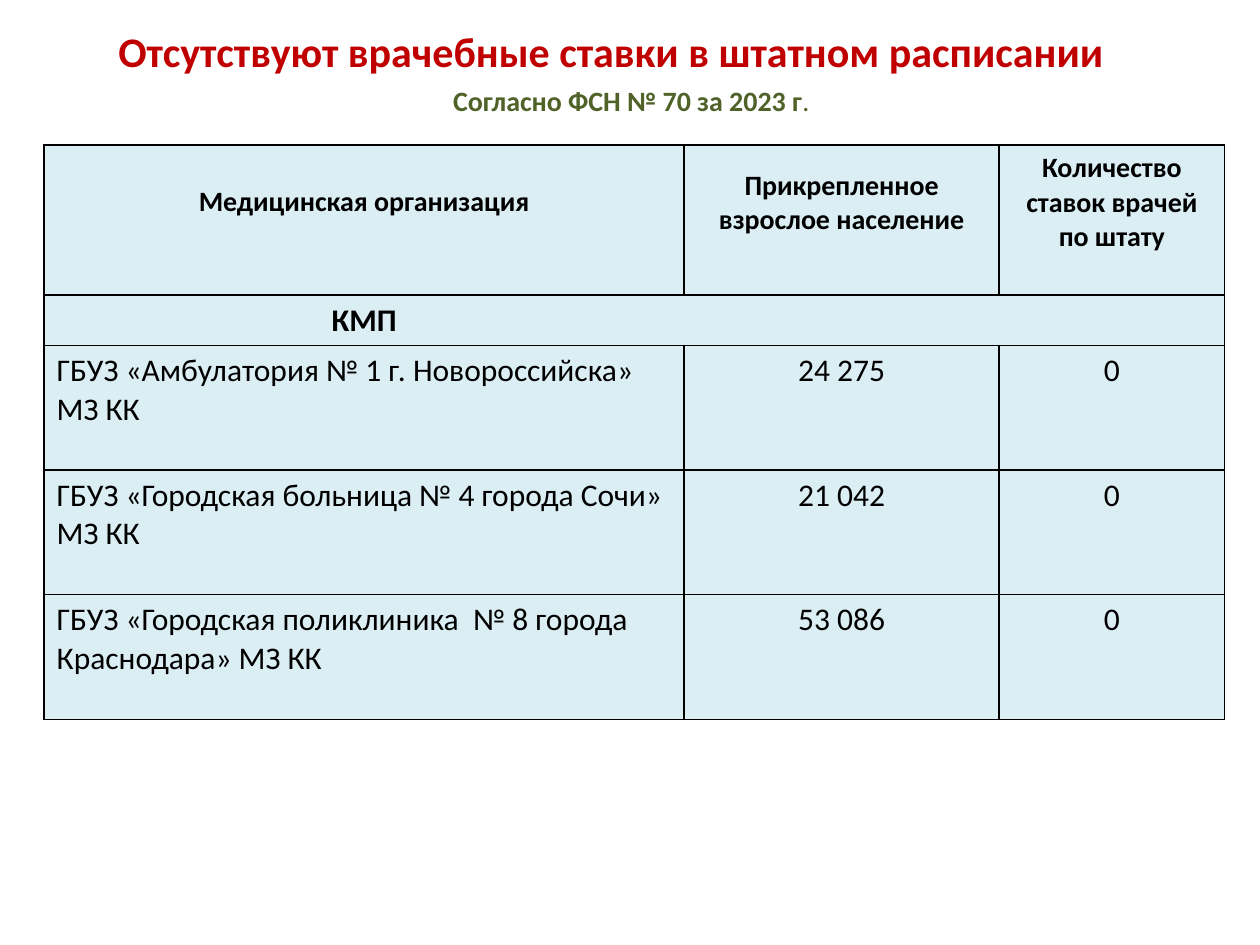
from lxml.etree import SubElement
from pptx import Presentation
from pptx.dml.color import RGBColor
from pptx.enum.text import MSO_ANCHOR, PP_ALIGN
from pptx.oxml.ns import qn
from pptx.util import Inches, Pt

RED = RGBColor(0xC0, 0x00, 0x00)
GREEN = RGBColor(0x4F, 0x62, 0x28)
BLACK = RGBColor(0x00, 0x00, 0x00)
PALE_BLUE = RGBColor(0xDB, 0xEE, 0xF4)

COL_WIDTHS = [5.08, 2.5, 1.79]
ROW_HEIGHTS = [1.19, 0.4, 0.99, 0.99, 0.99]
HEADERS = [
    ("Медицинская организация", MSO_ANCHOR.TOP, 0.32, 0.05),
    ("Прикрепленное взрослое население", MSO_ANCHOR.MIDDLE, 0.05, 0.32),
    ("Количество ставок врачей по штату", MSO_ANCHOR.MIDDLE, 0.05, 0.33),
]
SECTION = "КМП"
CLINICS = [
    ("ГБУЗ «Амбулатория № 1 г. Новороссийска» МЗ КК", "24 275", "0"),
    ("ГБУЗ «Городская больница № 4 города Сочи» МЗ КК", "21 042", "0"),
    ("ГБУЗ «Городская поликлиника  № 8 города Краснодара» МЗ КК", "53 086", "0"),
]


def add_run(p, text, size, color, bold):
    """Append one formatted run to a paragraph."""
    r = p.add_run()
    r.text = text
    r.font.name = "Calibri"
    r.font.size = Pt(size)
    r.font.bold = bold
    r.font.color.rgb = color


def add_heading(s, box, size, color, runs):
    """Place a centred line of (text, bold) runs in the box."""
    tf = s.shapes.add_textbox(*map(Inches, box)).text_frame
    tf.word_wrap = True
    tf.vertical_anchor = MSO_ANCHOR.MIDDLE
    p = tf.paragraphs[0]
    p.alignment = PP_ALIGN.CENTER
    for text, bold in runs:
        add_run(p, text, size, color, bold)


def style_cell(cell, sides):
    """Fill a cell and rule only the given sides."""
    tcPr = cell._tc.get_or_add_tcPr()
    for side in "LRTB":
        ln = SubElement(tcPr, qn(f"a:ln{side}"), w=str(Pt(0.96)))
        if side in sides:
            fill = SubElement(ln, qn("a:solidFill"))
            SubElement(fill, qn("a:srgbClr"), val=str(BLACK))
        else:
            SubElement(ln, qn("a:noFill"))
    cell.fill.solid()
    cell.fill.fore_color.rgb = PALE_BLUE


def write_cell(cell, text, size, bold, align):
    """Write one aligned paragraph in a cell."""
    p = cell.text_frame.paragraphs[0]
    p.alignment = align
    add_run(p, text, size, BLACK, bold)


def add_clinic_table(s, box):
    """Place the table of clinics without physician posts in the box."""
    frame = s.shapes.add_table(len(ROW_HEIGHTS), len(COL_WIDTHS), *map(Inches, box))
    table = frame.table
    for col, width in zip(table.columns, COL_WIDTHS):
        col.width = Inches(width)
    for row, height in zip(table.rows, ROW_HEIGHTS):
        row.height = Inches(height)
    section_sides = ["LTB", "TB", "RTB"]
    for i, row in enumerate(table.rows):
        for j, cell in enumerate(row.cells):
            style_cell(cell, section_sides[j] if i == 1 else "LRTB")
    for j, (text, anchor, top, bottom) in enumerate(HEADERS):
        cell = table.cell(0, j)
        cell.vertical_anchor = anchor
        cell.margin_top, cell.margin_bottom = Inches(top), Inches(bottom)
        write_cell(cell, text, 16, True, PP_ALIGN.CENTER)
    write_cell(table.cell(1, 0), SECTION, 18, True, PP_ALIGN.CENTER)
    for i, clinic in enumerate(CLINICS, 2):
        for j, text in enumerate(clinic):
            align = PP_ALIGN.CENTER if j else PP_ALIGN.LEFT
            write_cell(table.cell(i, j), text, 18, False, align)


def main():
    """Build and save the slide."""
    prs = Presentation()
    prs.slide_width, prs.slide_height = Inches(10), Inches(7.5)
    s = prs.slides.add_slide(prs.slide_layouts[6])
    add_heading(s, (0.35, 0.13, 9, 0.54), 24, RED,
                [("Отсутствуют врачебные ставки в штатном расписании", True)])
    add_clinic_table(s, (0.35, 1.15, sum(COL_WIDTHS), sum(ROW_HEIGHTS)))
    add_heading(s, (0.51, 0.6, 9, 0.39), 16, GREEN,
                [("Согласно ФСН № 70 за 2023 г", True), (".", False)])
    prs.save("out.pptx")


if __name__ == "__main__":
    main()
